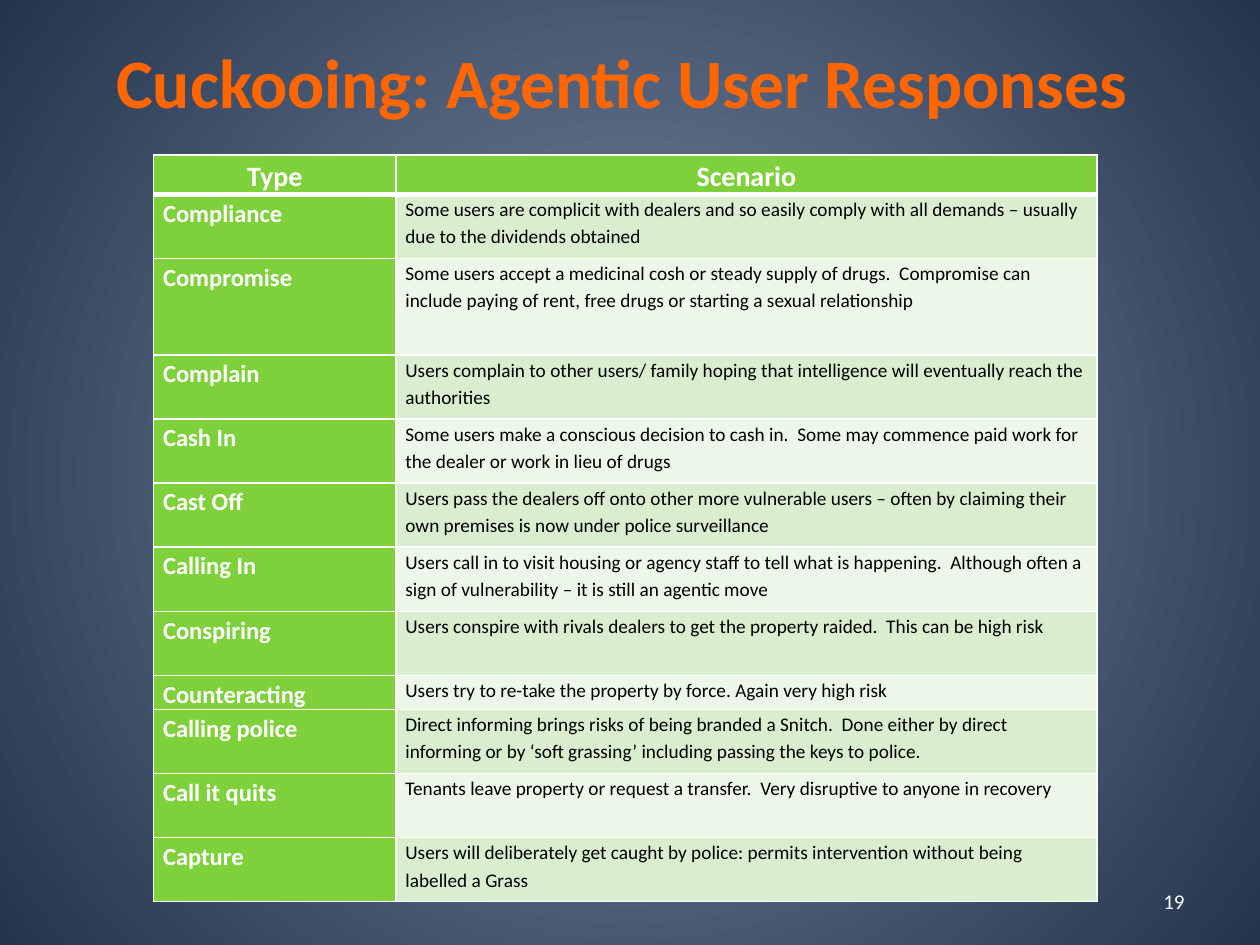
import pptx
import pptx.util
import pptx.dml.color
import pptx.enum.text
import pptx.oxml
import pptx.oxml.ns

Pt = pptx.util.Pt
RGBColor = pptx.dml.color.RGBColor
Align = pptx.enum.text.PP_ALIGN
Anchor = pptx.enum.text.MSO_ANCHOR

ORANGE = RGBColor(0xFF, 0x66, 0x00)
WHITE = RGBColor(0xFF, 0xFF, 0xFF)
BLACK = RGBColor(0x00, 0x00, 0x00)
GREEN = RGBColor(0x7F, 0xD1, 0x3B)
BANDS = [RGBColor(0xD8, 0xEE, 0xCE), RGBColor(0xEC, 0xF7, 0xE8)]
GLOW = RGBColor(0x7D, 0x8D, 0xAA)
NAVY = RGBColor(0x24, 0x34, 0x4C)

TITLE_FONT = {"name": "Calibri", "size": Pt(39.6), "bold": True}
HEADER_FONT = {"name": "Calibri", "size": Pt(16), "bold": True}
TYPE_FONT = {"name": "Calibri", "size": Pt(14), "bold": True}
SCENARIO_FONT = {"name": "Calibri", "size": Pt(11), "bold": False}
NUMBER_FONT = {"name": "Calibri", "size": Pt(12), "bold": False}
CELL_FORMAT = {
    "margin_left": Pt(5.4), "margin_right": Pt(5.4),
    "margin_top": Pt(0), "margin_bottom": Pt(0),
    "vertical_anchor": Anchor.TOP,
}

COLUMN_WIDTHS = [138.5, 400.5]
HEADER_HEIGHT = 22.1
ROW_HEIGHT = 36.6
SPECIAL_HEIGHTS = {"Compromise": 55.2, "Counteracting": 18.4}
RESPONSES = [
    ("Compliance", "Some users are complicit with dealers and so easily comply with all demands – usually due to the dividends obtained"),
    ("Compromise", "Some users accept a medicinal cosh or steady supply of drugs.  Compromise can include paying of rent, free drugs or starting a sexual relationship"),
    ("Complain", "Users complain to other users/ family hoping that intelligence will eventually reach the authorities"),
    ("Cash In", "Some users make a conscious decision to cash in.  Some may commence paid work for the dealer or work in lieu of drugs"),
    ("Cast Off", "Users pass the dealers off onto other more vulnerable users – often by claiming their own premises is now under police surveillance"),
    ("Calling In", "Users call in to visit housing or agency staff to tell what is happening.  Although often a sign of vulnerability – it is still an agentic move"),
    ("Conspiring", "Users conspire with rivals dealers to get the property raided.  This can be high risk"),
    ("Counteracting", "Users try to re-take the property by force. Again very high risk"),
    ("Calling police", "Direct informing brings risks of being branded a Snitch.  Done either by direct informing or by ‘soft grassing’ including passing the keys to police."),
    ("Call it quits", "Tenants leave property or request a transfer.  Very disruptive to anyone in recovery"),
    ("Capture", "Users will deliberately get caught by police: permits intervention without being labelled a Grass"),
]


def apply_format(target, values):
    for name, value in values.items():
        setattr(target, name, value)


def write_text(frame, text, font, color, align):
    para = frame.paragraphs[0]
    para.alignment = align
    span = para.add_run()
    span.text = text
    apply_format(span.font, font)
    span.font.color.rgb = color
    return para


def paint_background(page):
    fill = page.background.fill
    fill.gradient()
    for stop, color, position in zip(fill.gradient_stops, (GLOW, NAVY), (0, 1)):
        stop.color.rgb = color
        stop.position = position
    gradient = page.background._cSld.find(".//" + pptx.oxml.ns.qn("a:gradFill"))
    gradient.remove(gradient.find(pptx.oxml.ns.qn("a:lin")))
    gradient.append(pptx.oxml.parse_xml(
        f'<a:path {pptx.oxml.ns.nsdecls("a")} path="circle">'
        '<a:fillToRect l="50000" t="50000" r="50000" b="50000"/></a:path>'))


def set_text_box(box, bounds, text, font, color, align):
    apply_format(box, dict(zip(("left", "top", "width", "height"), map(Pt, bounds))))
    apply_format(box.text_frame, {
        "word_wrap": True,
        "auto_size": pptx.enum.text.MSO_AUTO_SIZE.NONE,
        "vertical_anchor": Anchor.MIDDLE,
    })
    write_text(box.text_frame, text, font, color, align)


def set_borders(cell, bottom_width):
    properties = cell._tc.get_or_add_tcPr()
    for side, width in {"L": 1, "R": 1, "T": 1, "B": bottom_width}.items():
        properties.append(pptx.oxml.parse_xml(
            f'<a:ln{side} {pptx.oxml.ns.nsdecls("a")} w="{Pt(width)}">'
            f'<a:solidFill><a:srgbClr val="{WHITE}"/></a:solidFill></a:ln{side}>'))


def fill_cell(cell, text, font, color, fill, align=Align.LEFT, bottom_width=1):
    apply_format(cell, CELL_FORMAT)
    para = write_text(cell.text_frame, text, font, color, align)
    para.line_spacing = 1.15
    set_borders(cell, bottom_width)
    cell.fill.solid()
    cell.fill.fore_color.rgb = fill


def add_response_table(page):
    heights = [HEADER_HEIGHT] + [SPECIAL_HEIGHTS.get(kind, ROW_HEIGHT) for kind, _ in RESPONSES]
    table = page.shapes.add_table(
        len(heights), len(COLUMN_WIDTHS), Pt(87.8), Pt(88.6),
        Pt(sum(COLUMN_WIDTHS)), Pt(sum(heights))).table
    table.horz_banding = False
    for column, width in zip(table.columns, COLUMN_WIDTHS):
        column.width = Pt(width)
    for row, height in zip(table.rows, heights):
        row.height = Pt(height)
    for column, heading in enumerate(("Type", "Scenario")):
        fill_cell(table.cell(0, column), heading, HEADER_FONT, WHITE, GREEN, Align.CENTER, 3)
    for index, (kind, scenario) in enumerate(RESPONSES):
        fill_cell(table.cell(index + 1, 0), kind, TYPE_FONT, WHITE, GREEN)
        fill_cell(table.cell(index + 1, 1), scenario, SCENARIO_FONT, BLACK, BANDS[index % 2])


def main():
    deck = pptx.Presentation()
    deck.slide_width, deck.slide_height = Pt(720), Pt(540)
    page = deck.slides.add_slide(deck.slide_layouts[5])
    paint_background(page)
    set_text_box(page.shapes.title, (36, 9.4, 648, 73.4),
                 "Cuckooing: Agentic User Responses ", TITLE_FONT, ORANGE, Align.CENTER)
    add_response_table(page)
    number_box = page.shapes.add_textbox(0, 0, 0, 0)
    set_text_box(number_box, (516, 500.5, 168, 28.8), "19", NUMBER_FONT, WHITE, Align.RIGHT)
    deck.save("out.pptx")


if __name__ == "__main__":
    main()
